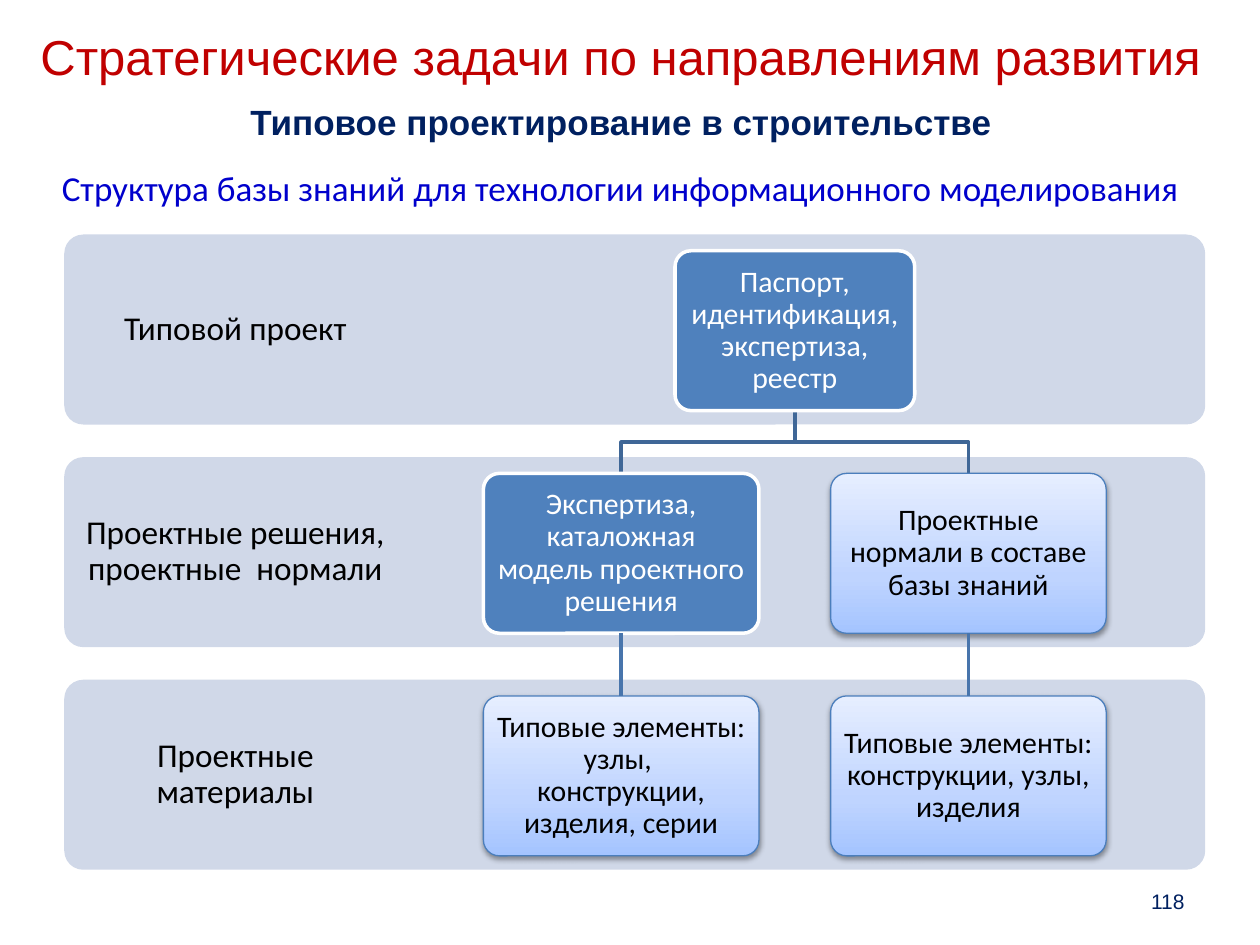
from copy import deepcopy

from lxml.etree import SubElement
from pptx import Presentation
from pptx.dml.color import RGBColor
from pptx.enum.shapes import MSO_CONNECTOR, MSO_SHAPE
from pptx.enum.text import MSO_ANCHOR, PP_ALIGN
from pptx.oxml.ns import qn
from pptx.util import Pt


def color(value):
    return RGBColor.from_string(value)


class SlideBuilder:
    BAND = "D0D8E8"
    BLUE = "4F81BD"
    WHITE = "FFFFFF"
    BLACK = "000000"
    NAVY = "002060"
    ELBOW = "3F6797"
    LINK = "4875AC"
    EDGE = "4B7EBC"
    GRADIENT = [(0, "A4C4FF"), (0.35, "BFD4FF"), (1, "E6EEFF")]

    def __init__(self, slide):
        self.slide = slide
        self.shapes = slide.shapes

    def add_text(self, target, text, size, tint, font="Calibri", bold=False,
                 align=PP_ALIGN.CENTER, inset=None, spacing=None):
        frame = target.text_frame
        frame.word_wrap = True
        frame.vertical_anchor = MSO_ANCHOR.MIDDLE
        if inset is not None:
            frame.margin_left = frame.margin_right = Pt(inset)
            frame.margin_top = frame.margin_bottom = Pt(inset)
        paragraph = frame.paragraphs[0]
        paragraph.alignment = align
        paragraph.space_before = Pt(0)
        if spacing:
            paragraph.line_spacing = spacing
        run = paragraph.add_run()
        run.text = text
        run.font.size = Pt(size)
        run.font.name = font
        run.font.bold = bold
        run.font.color.rgb = color(tint)

    def title(self, text, left, top, width, height):
        heading = self.shapes.title
        heading.left, heading.top = Pt(left), Pt(top)
        heading.width, heading.height = Pt(width), Pt(height)
        self.add_text(heading, text, 20, "0000CC")

    def label(self, text, left, top, width, height, size, tint, **style):
        area = self.shapes.add_textbox(Pt(left), Pt(top), Pt(width), Pt(height))
        self.add_text(area, text, size, tint, **style)

    def rounded(self, left, top, width, height):
        panel = self.shapes.add_shape(
            MSO_SHAPE.ROUNDED_RECTANGLE, Pt(left), Pt(top), Pt(width), Pt(height))
        panel.adjustments[0] = 0.1
        panel.shadow.inherit = False
        return panel

    def band(self, text, left, top, width, height):
        panel = self.rounded(left, top, width, height)
        panel.fill.solid()
        panel.fill.fore_color.rgb = color(self.BAND)
        panel.line.fill.background()
        self.label(text, left, top, width * 0.3, height, 19, self.BLACK,
                   inset=10.8, spacing=0.9)

    def solid_box(self, text, left, top, width, height):
        box = self.rounded(left, top, width, height)
        box.fill.solid()
        box.fill.fore_color.rgb = color(self.BLUE)
        box.line.color.rgb = color(self.WHITE)
        box.line.width = Pt(2)
        self.add_text(box, text, 17, self.WHITE, inset=5, spacing=0.9)
        return box

    def gradient_box(self, text, left, top, width, height):
        box = self.rounded(left, top, width, height)
        box.fill.gradient()
        box.fill.gradient_angle = 90
        properties = box._element.spPr
        stop_list = properties.find(".//" + qn("a:gsLst"))
        stop_list.append(deepcopy(stop_list[0]))
        for stop, (position, tint) in zip(box.fill.gradient_stops, self.GRADIENT):
            stop.position = position
            stop.color.rgb = color(tint)
        box.line.color.rgb = color(self.EDGE)
        box.line.width = Pt(0.75)
        shadow = SubElement(
            properties.find(qn("a:effectLst")), qn("a:outerShdw"),
            blurRad=str(Pt(3.1)), dist=str(Pt(1.6)), dir="5400000", rotWithShape="0")
        tone = SubElement(shadow, qn("a:srgbClr"), val=self.BLACK)
        SubElement(tone, qn("a:alpha"), val="38000")
        self.add_text(box, text, 17, self.BLACK, inset=5, spacing=0.9)
        return box

    def elbow(self, start_x, start_y, end_x, end_y):
        middle = (start_y + end_y) / 2
        builder = self.shapes.build_freeform(Pt(start_x), Pt(start_y))
        builder.add_line_segments(
            [(Pt(start_x), Pt(middle)), (Pt(end_x), Pt(middle)),
             (Pt(end_x), Pt(end_y))], close=False)
        branch = builder.convert_to_shape()
        branch.shadow.inherit = False
        branch.fill.background()
        branch.line.color.rgb = color(self.ELBOW)
        branch.line.width = Pt(2)

    def link(self, parent, child):
        line = self.shapes.add_connector(MSO_CONNECTOR.STRAIGHT, 0, 0, 0, 0)
        line.begin_connect(parent, 2)
        line.end_connect(child, 0)
        line.line.color.rgb = color(self.LINK)
        line.line.width = Pt(2)
        SubElement(line._element.spPr, qn("a:effectLst"))


def main():
    deck = Presentation()
    deck.slide_width, deck.slide_height = Pt(720), Pt(540)
    page = SlideBuilder(deck.slides.add_slide(deck.slide_layouts[5]))

    page.title("Структура базы знаний для технологии информационного моделирования",
               20, 69, 669, 76)
    page.label("118", 516, 500.5, 168, 29, 12, page.NAVY,
               font="Arial", align=PP_ALIGN.RIGHT)
    page.label("Типовое проектирование в строительстве", -2, 49, 714, 41, 20,
               page.NAVY, font="Arial", bold=True)
    page.label("Стратегические задачи по направлениям развития", 8, 2, 693, 60, 28,
               "C00000", font="Arial")

    levels = ["Типовой проект", "Проектные решения, проектные  нормали",
              "Проектные материалы"]
    first_band, first_box, step = 134, 143.3, 127.2
    box_height, root_width, child_width = 91.4, 137, 157.5
    root_center, child_centers = 454.2, (355, 553.4)

    for row, level in enumerate(levels):
        page.band(level, 36.7, first_band + row * step, 652, 108.6)
    for center in child_centers:
        page.elbow(root_center, first_box + box_height, center, first_box + step)
    page.solid_box("Паспорт, идентификация, экспертиза, реестр",
                   root_center - root_width / 2, first_box, root_width, box_height)

    branches = [
        (page.solid_box, "Экспертиза, каталожная модель проектного решения",
         "Типовые элементы: узлы,  конструкции, изделия, серии"),
        (page.gradient_box, "Проектные нормали в составе базы знаний",
         "Типовые элементы: конструкции, узлы, изделия"),
    ]
    for center, (draw_solution, solution, elements) in zip(child_centers, branches):
        left = center - child_width / 2
        solution_box = draw_solution(solution, left, first_box + step,
                                     child_width, box_height)
        elements_box = page.gradient_box(elements, left, first_box + 2 * step,
                                         child_width, box_height)
        page.link(solution_box, elements_box)

    deck.save("out.pptx")


if __name__ == "__main__":
    main()
